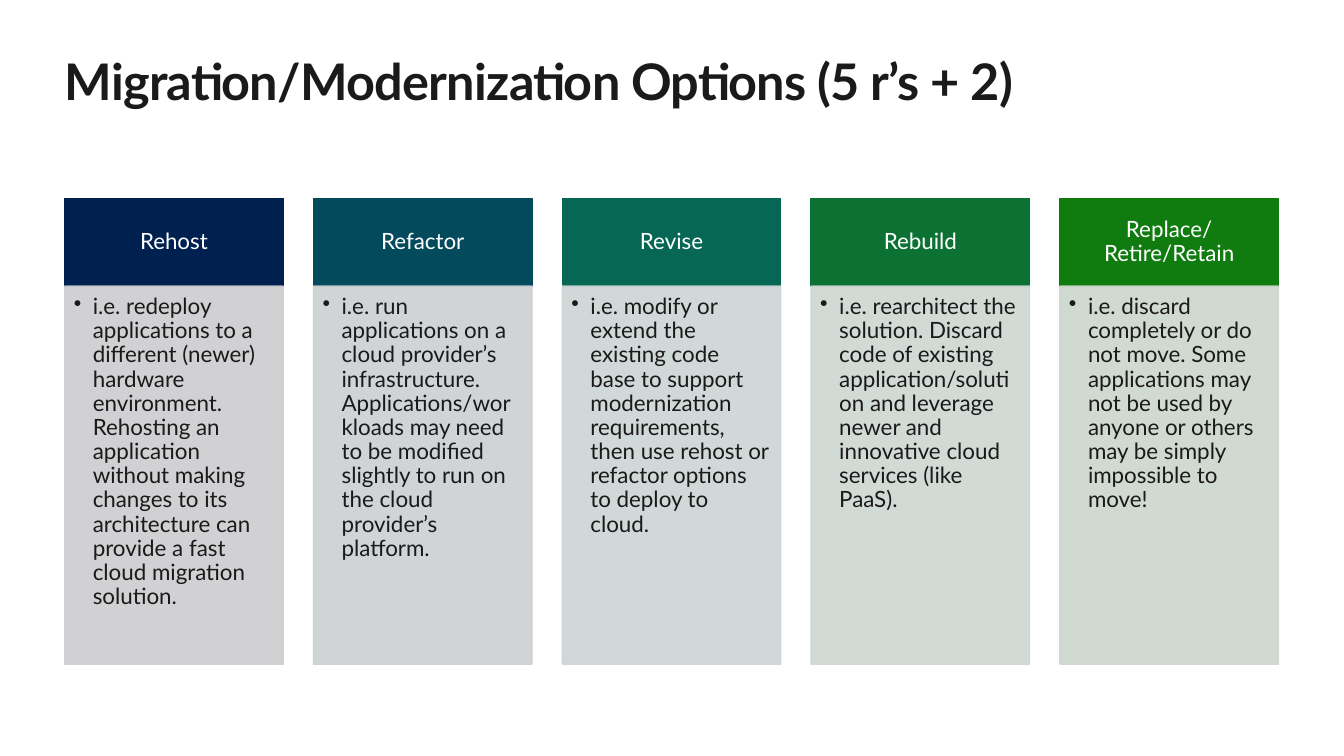
"""Build the slide of migration and modernization options."""
from lxml import etree
from pptx import Presentation, util as u
from pptx.dml.color import RGBColor
from pptx.enum import shapes, text
from pptx.oxml.ns import qn

FONT = "Lato"
HUES = {"ink": "1A1A1A", "white": "FFFFFF"}
HEADS = {"Rehost": "002050", "Refactor": "034A5C", "Revise": "066854",
         "Rebuild": "0B7234", "Replace/\vRetire/Retain": "107C10"}
TINTS = {"Rehost": "CCCDD0", "Refactor": "CCD0D2", "Revise": "CCD4D4",
         "Rebuild": "CCD6D1", "Replace/\vRetire/Retain": "CDD7CD"}
NOTES = {
    "Rehost": "i.e. redeploy applications to a different (newer) hardware "
              "environment. Rehosting an application without making changes "
              "to its architecture can provide a fast cloud migration solution.",
    "Refactor": "i.e. run applications on a cloud provider’s infrastructure. "
                "Applications/workloads may need to be modified slightly to "
                "run on the cloud provider’s platform.",
    "Revise": "i.e. modify or extend the existing code base to support "
              "modernization requirements, then use rehost or refactor "
              "options to deploy to cloud.",
    "Rebuild": "i.e. rearchitect the solution. Discard code of existing "
               "application/solution and leverage newer and innovative cloud "
               "services (like PaaS).",
    "Replace/\vRetire/Retain": "i.e. discard completely or do not move. Some "
                               "applications may not be used by anyone or "
                               "others may be simply impossible to move!",
}
LEFT, PITCH, WIDTH = 1.63, 6.27, 5.51
TOP, HEAD, BODY = 5.0, 2.21, 9.53


def style(par, size, hue, bold=False):
    """Set the font of a paragraph."""
    font = par.font
    font.name, font.size, font.bold = FONT, u.Pt(size), bold
    font.color.rgb = RGBColor.from_string(HUES[hue])


def inset(frame, left, top, right, bottom):
    """Set the margins of a text frame in centimetres."""
    frame.margin_left, frame.margin_top = u.Cm(left), u.Cm(top)
    frame.margin_right, frame.margin_bottom = u.Cm(right), u.Cm(bottom)


def fade(part, share):
    """Make the solid colours of a shape partly transparent."""
    for tone in part._element.spPr.iter(qn("a:srgbClr")):
        etree.SubElement(tone, qn("a:alpha"), val=str(share * 1000))


def bullet(par):
    """Give a paragraph a round bullet with a hanging indent."""
    props = par._p.get_or_add_pPr()
    props.set("marL", str(u.Cm(0.48)))
    props.set("indent", str(u.Cm(-0.48)))
    etree.SubElement(props, qn("a:buChar"), char="•")


def panel(slide, left, top, height, fill, words):
    """Add a filled rectangle with text and return it."""
    part = slide.shapes.add_shape(shapes.MSO_SHAPE.RECTANGLE, u.Cm(left),
                                  u.Cm(top), u.Cm(WIDTH), u.Cm(height))
    part.shadow.inherit = False
    part.fill.solid()
    part.fill.fore_color.rgb = RGBColor.from_string(fill)
    part.line.color.rgb = RGBColor.from_string(fill)
    part.line.width = u.Pt(0.85)
    frame = part.text_frame
    frame.word_wrap = True
    par = frame.paragraphs[0]
    par.text = words
    par.line_spacing = 0.9
    return part


def header(slide, left, name):
    """Add the coloured heading of a column."""
    part = panel(slide, left, TOP, HEAD, HEADS[name], name)
    frame = part.text_frame
    inset(frame, 0.3, 0.18, 0.3, 0.18)
    frame.vertical_anchor = text.MSO_ANCHOR.MIDDLE
    par = frame.paragraphs[0]
    par.alignment = text.PP_ALIGN.CENTER
    style(par, 16, "white")


def detail(slide, left, name):
    """Add the tinted explanation of a column."""
    part = panel(slide, left, TOP + HEAD, BODY, TINTS[name], NOTES[name])
    fade(part, 90)
    frame = part.text_frame
    inset(frame, 0.23, 0.23, 0.3, 0.36)
    frame.vertical_anchor = text.MSO_ANCHOR.TOP
    par = frame.paragraphs[0]
    par.alignment = text.PP_ALIGN.LEFT
    bullet(par)
    style(par, 16, "ink")


def title(slide, words):
    """Place and format the slide title."""
    part = slide.shapes.title
    part.left, part.top = u.Cm(LEFT), u.Cm(1.27)
    part.width, part.height = u.Cm(30.6), u.Cm(1.55)
    frame = part.text_frame
    inset(frame, 0, 0, 0, 0)
    frame.vertical_anchor = text.MSO_ANCHOR.TOP
    par = frame.paragraphs[0]
    par.text = words
    par.alignment = text.PP_ALIGN.LEFT
    style(par, 36, "ink", True)
    par.font._element.set("spc", "-50")


def main():
    """Build and save the deck."""
    deck = Presentation()
    deck.slide_width, deck.slide_height = u.Cm(33.87), u.Cm(19.05)
    slide = deck.slides.add_slide(deck.slide_layouts[5])
    title(slide, "Migration/Modernization Options (5 r’s + 2)")
    for col, name in enumerate(HEADS):
        left = LEFT + col * PITCH
        header(slide, left, name)
        detail(slide, left, name)
    deck.save("out.pptx")


if __name__ == "__main__":
    main()
